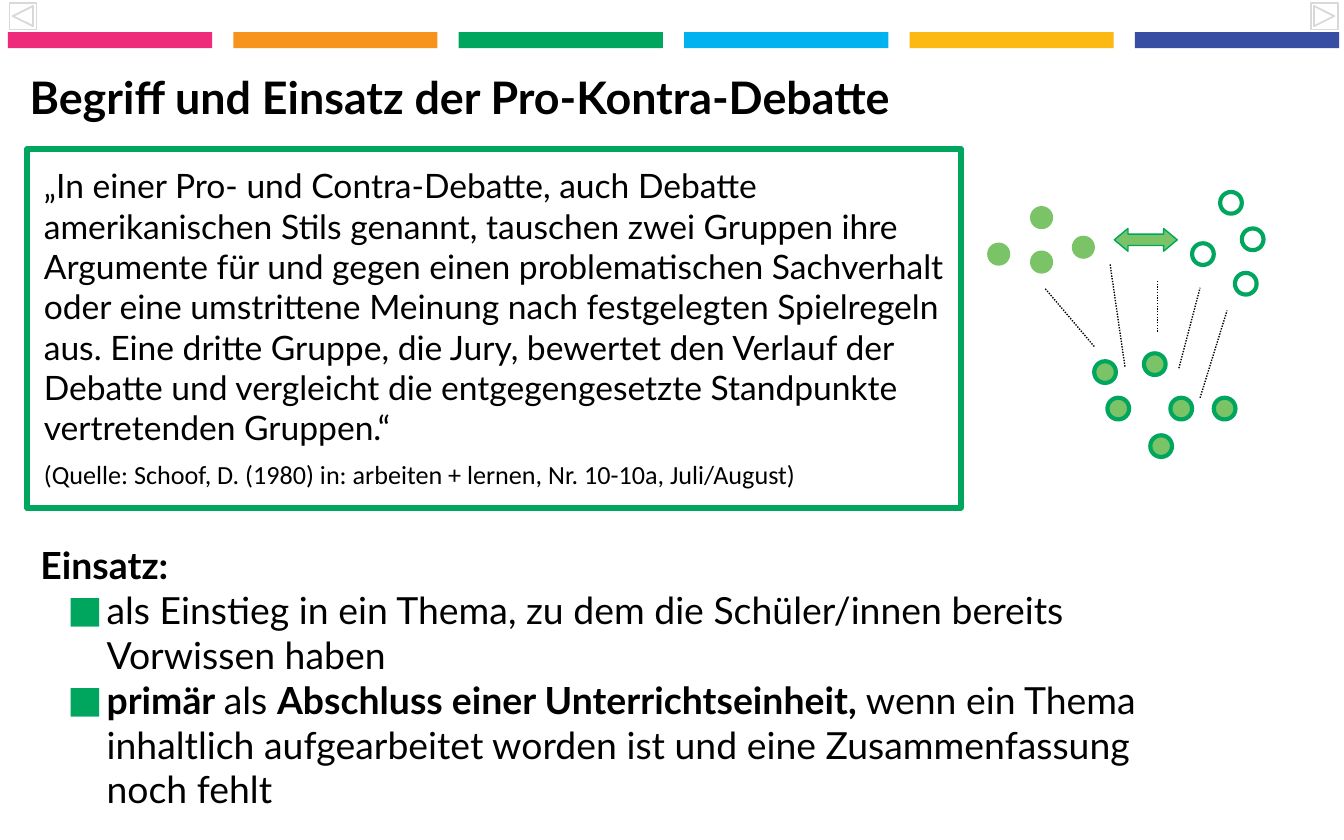
from pptx import Presentation
from pptx.dml.color import RGBColor
from pptx.enum.dml import MSO_LINE
from pptx.enum.shapes import MSO_CONNECTOR, MSO_SHAPE
from pptx.enum.text import MSO_ANCHOR, MSO_AUTO_SIZE, PP_ALIGN
from pptx.oxml.ns import qn
from pptx.util import Cm, Pt
from lxml import etree

PINK = RGBColor(0xEE, 0x2A, 0x7B)
ORANGE = RGBColor(0xF7, 0x94, 0x1D)
GREEN = RGBColor(0x00, 0xA6, 0x5D)
CYAN = RGBColor(0x00, 0xB3, 0xF0)
YELLOW = RGBColor(0xFD, 0xB9, 0x13)
BLUE = RGBColor(0x37, 0x4E, 0xA2)
LIGHT_GREEN = RGBColor(0x7A, 0xC3, 0x66)
GREY = RGBColor(0xD9, 0xD9, 0xD9)
WHITE = RGBColor(0xFF, 0xFF, 0xFF)
BLACK = RGBColor(0, 0, 0)

RECTANGLE, OVAL = MSO_SHAPE.RECTANGLE, MSO_SHAPE.OVAL
FOLDED_CORNER, DOUBLE_ARROW = MSO_SHAPE.FOLDED_CORNER, MSO_SHAPE.LEFT_RIGHT_ARROW
BACK = MSO_SHAPE.ACTION_BUTTON_BACK_OR_PREVIOUS
FORWARD = MSO_SHAPE.ACTION_BUTTON_FORWARD_OR_NEXT
STRAIGHT, DOTTED = MSO_CONNECTOR.STRAIGHT, MSO_LINE.ROUND_DOT
MIDDLE, TOP = MSO_ANCHOR.MIDDLE, MSO_ANCHOR.TOP
LEFT, JUSTIFY = PP_ALIGN.LEFT, PP_ALIGN.JUSTIFY
NO_AUTOFIT = MSO_AUTO_SIZE.NONE

TITLE = "Begriff und Einsatz der Pro-Kontra-Debatte"
QUOTE = (
    "„In einer Pro- und Contra-Debatte, auch Debatte amerikanischen Stils "
    "genannt, tauschen zwei Gruppen ihre Argumente für und gegen einen "
    "problematischen Sachverhalt oder eine umstrittene Meinung nach "
    "festgelegten Spielregeln aus. Eine dritte Gruppe, die Jury, bewertet den "
    "Verlauf der Debatte und vergleicht die entgegengesetzte Standpunkte "
    "vertretenden Gruppen.“"
)
SOURCE = "(Quelle: Schoof, D. (1980) in: arbeiten + lernen, Nr. 10-10a, Juli/August)"
# Each list item is a row of (text, bold) spans
USES = [
    [("als Einstieg in ein Thema, zu dem die Schüler/innen bereits Vorwissen haben", False)],
    [
        ("primär ", True),
        ("als ", False),
        ("Abschluss einer Unterrichtseinheit,", True),
        (" wenn ein Thema inhaltlich aufgearbeitet worden ist und eine "
         "Zusammenfassung noch fehlt", False),
    ],
]

# Positions in centimetres
BAR_COLOURS = [PINK, ORANGE, GREEN, CYAN, YELLOW, BLUE]
BAR_START, BAR_PITCH = 0.15, 4.26
DOT_SIZE = 0.41
PRO_GROUP = [(18.67, 4.6), (19.48, 4.75), (19.48, 3.91), (20.27, 4.47)]
CONTRA_GROUP = [(22.53, 4.6), (23.47, 4.32), (23.34, 5.16), (23.06, 3.63)]
JURY = [(20.68, 6.83), (21.62, 6.68), (20.93, 7.52),
        (22.12, 7.52), (22.94, 7.52), (21.74, 8.23)]
SIGHT_LINES = [
    (20.68, 6.55, 19.74, 5.44),
    (21.26, 6.93, 20.98, 5.0),
    (22.28, 6.96, 22.68, 5.44),
    (21.87, 6.27, 21.87, 5.31),
    (22.68, 7.52, 23.19, 5.87),
]


class SlideBuilder:
    font = "Lato"
    text_colour = BLACK

    def __init__(self, slide):
        self.slide = slide

    def shape(self, kind, left, top, width, height, fill=None, line=None, weight=0.75):
        shape = self.slide.shapes.add_shape(kind, Cm(left), Cm(top), Cm(width), Cm(height))
        shape.shadow.inherit = False
        if fill is None:
            shape.fill.background()
        else:
            shape.fill.solid()
            shape.fill.fore_color.rgb = fill
        if line is None:
            shape.line.fill.background()
        else:
            shape.line.color.rgb = line
            shape.line.width = Pt(weight)
        return shape

    def unfolded_frame(self, *place, line, weight):
        frame = self.shape(FOLDED_CORNER, *place, line=line, weight=weight)
        guides = frame._element.spPr.find(qn("a:prstGeom")).get_or_add_avLst()
        etree.SubElement(guides, qn("a:gd"), name="adj", fmla="val 0")

    def dots(self, places, fill, line, weight):
        for left, top in places:
            self.shape(OVAL, left, top, DOT_SIZE, DOT_SIZE, fill, line, weight)

    def dotted_line(self, *ends):
        line = self.slide.shapes.add_connector(STRAIGHT, *map(Cm, ends))
        line.line.color.rgb = BLACK
        line.line.width = Pt(0.75)
        line.line.dash_style = DOTTED
        etree.SubElement(line._element.spPr, qn("a:effectLst"))

    def text_box(self, left, top, width, height):
        return self.slide.shapes.add_textbox(Cm(left), Cm(top), Cm(width), Cm(height))

    def placeholder(self, index, left, top, width, height):
        box = self.slide.placeholders[index]
        box.left, box.top, box.width, box.height = map(Cm, (left, top, width, height))
        return box

    def frame(self, box, anchor=TOP):
        frame = box.text_frame
        frame.word_wrap = True
        frame.auto_size = NO_AUTOFIT
        frame.vertical_anchor = anchor
        return frame

    def paragraph(self, frame, spans, size, bold=None, font=None, align=LEFT,
                  after=0, bullet=None):
        para = frame.paragraphs[0]
        if para.runs:
            para = frame.add_paragraph()
        para.alignment = align
        para.space_before, para.space_after = Pt(0), Pt(after)
        self.bullet(para, bullet)
        para.font.name = font or self.font
        para.font.size = Pt(size)
        para.font.color.rgb = self.text_colour
        para.font.bold = bold
        for text, span_bold in spans:
            span = para.add_run()
            span.text = text
            if bold is None:
                span.font.bold = span_bold

    def bullet(self, para, character):
        properties = para._p.get_or_add_pPr()
        properties.set("marL", str(Cm(1.25) if character else 0))
        properties.set("indent", str(Cm(-0.74) if character else 0))
        if character is None:
            etree.SubElement(properties, qn("a:buNone"))
            return
        colour = etree.SubElement(properties, qn("a:buClr"))
        etree.SubElement(colour, qn("a:srgbClr"), val=str(GREEN))
        etree.SubElement(properties, qn("a:buFont"), typeface="Calibri")
        etree.SubElement(properties, qn("a:buChar"), char=character)


def main():
    deck = Presentation()
    deck.slide_width, deck.slide_height = Cm(25.4), Cm(15.88)
    page = SlideBuilder(deck.slides.add_slide(deck.slide_layouts[1]))

    # Colour bars and navigation buttons
    for number, colour in enumerate(BAR_COLOURS):
        page.shape(RECTANGLE, BAR_START + number * BAR_PITCH, 0.61, 3.86, 0.3, colour)
    page.shape(BACK, 0.18, 0.05, 0.51, 0.51, line=GREY, weight=1)
    page.shape(FORWARD, 24.77, 0.05, 0.51, 0.51, line=GREY, weight=1)

    # Title
    title = page.frame(page.placeholder(0, 0.56, 1.24, 19.71, 1.19), MIDDLE)
    title.margin_left = title.margin_right = title.margin_top = title.margin_bottom = 0
    page.paragraph(title, [(TITLE, True)], 24, bold=True)

    # Framed quotation
    page.unfolded_frame(0.51, 2.82, 17.65, 6.78, line=GREEN, weight=3)
    quote = page.frame(page.text_box(0.58, 3.0, 17.55, 6.45))
    page.paragraph(quote, [(QUOTE, False)], 18, bold=False, after=6)
    page.paragraph(quote, [(SOURCE, False)], 14, bold=False, font="Calibri", align=JUSTIFY)

    # Debate diagram: two groups above, the jury below
    page.dots(PRO_GROUP, LIGHT_GREEN, LIGHT_GREEN, 0.75)
    page.dots(CONTRA_GROUP, WHITE, GREEN, 2.25)
    arrow = page.shape(DOUBLE_ARROW, 21.06, 4.32, 1.19, 0.43, LIGHT_GREEN, GREEN)
    arrow.adjustments[0], arrow.adjustments[1] = 0.5, 0.6
    page.dots(JURY, LIGHT_GREEN, GREEN, 2.25)
    for ends in SIGHT_LINES:
        page.dotted_line(*ends)

    # List of uses
    uses = page.frame(page.placeholder(1, 0.51, 10.13, 22.71, 5.38))
    page.paragraph(uses, [("Einsatz:", True)], 20, bold=True)
    for spans in USES:
        page.paragraph(uses, spans, 20, bullet="■")

    deck.save("out.pptx")


if __name__ == "__main__":
    main()
